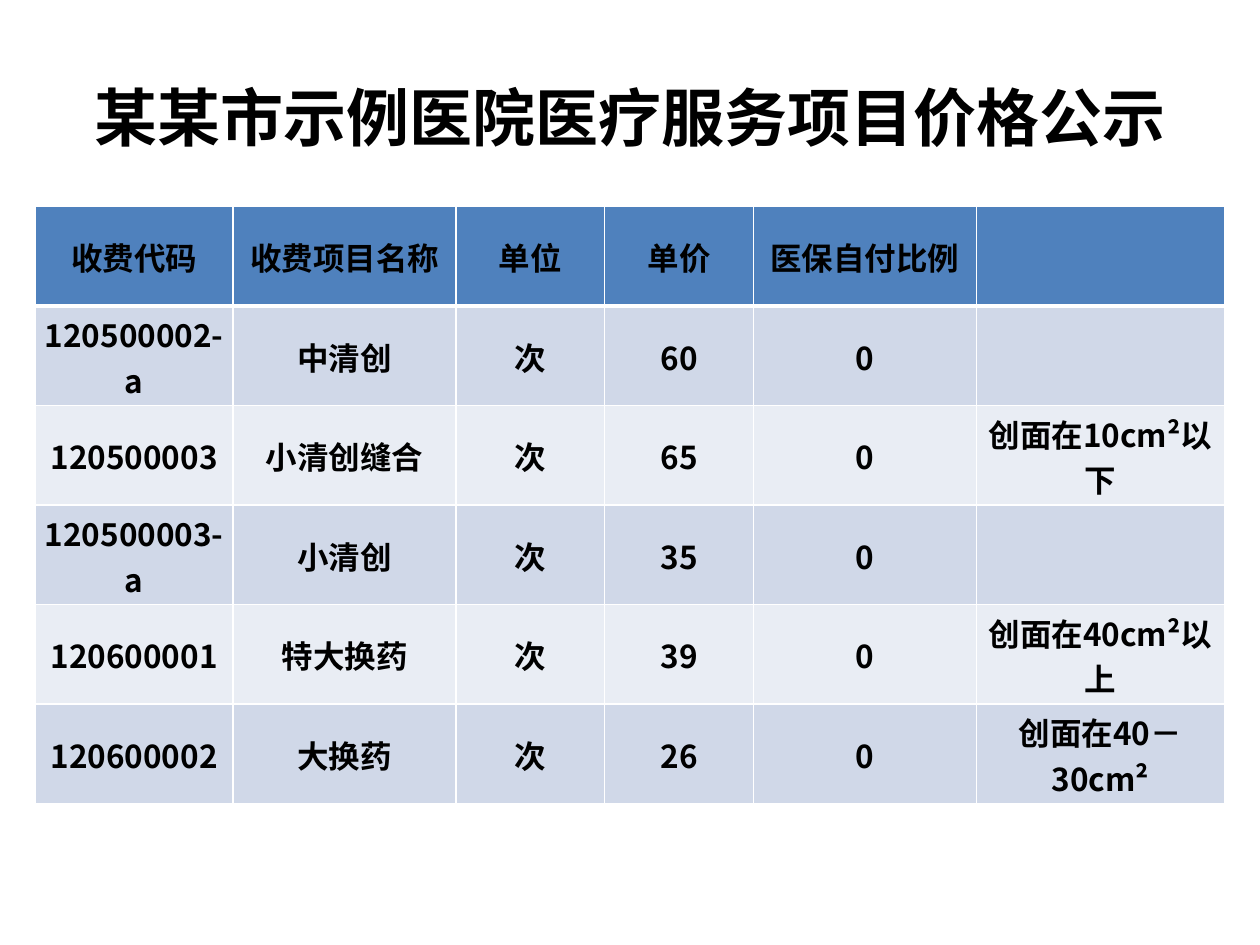
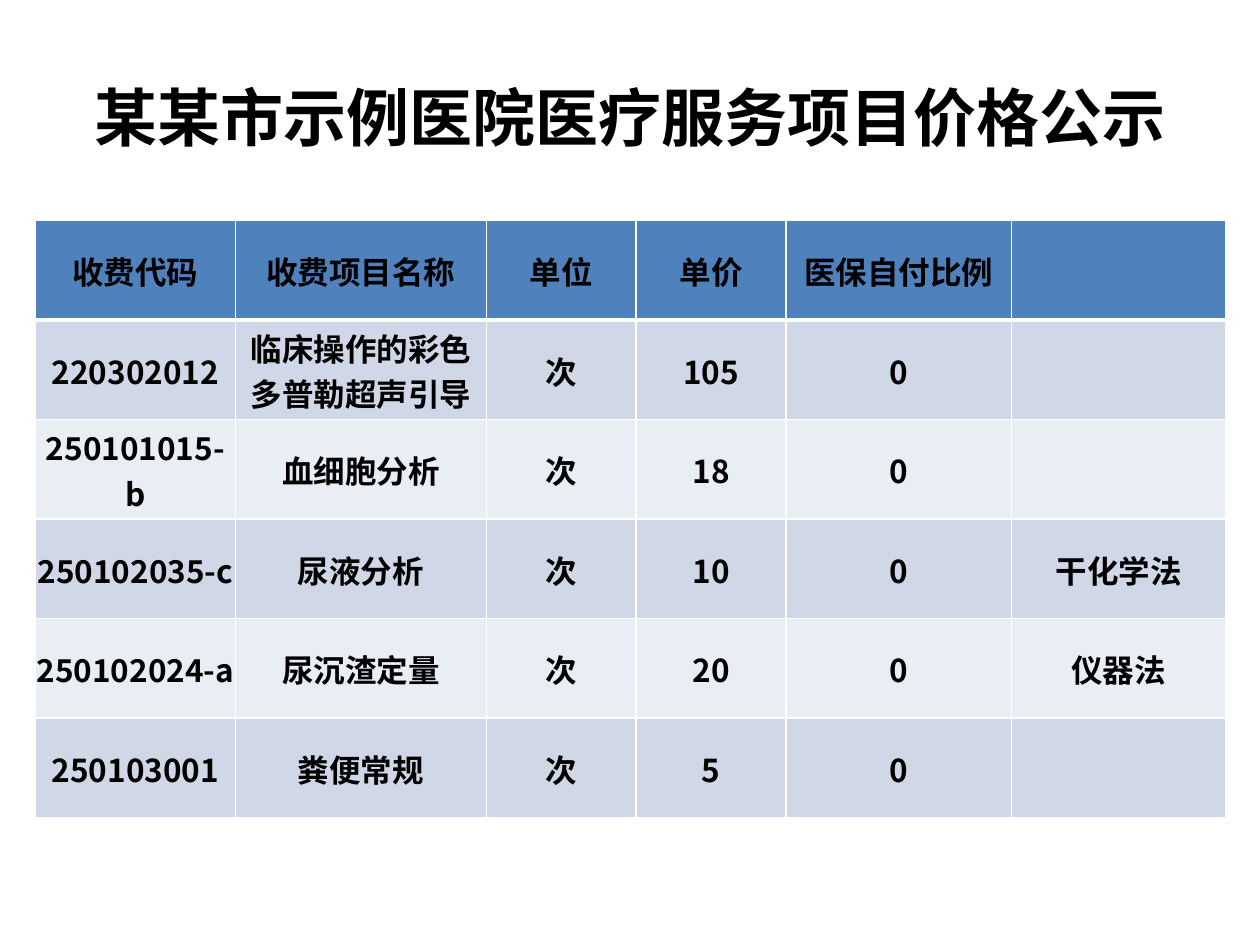
from lxml import etree
from pptx import Presentation
from pptx.dml.color import RGBColor
from pptx.enum.text import MSO_ANCHOR, PP_ALIGN
from pptx.oxml.ns import qn
from pptx.util import Inches, Pt

CENTER = PP_ALIGN.CENTER
MIDDLE = MSO_ANCHOR.MIDDLE

COLORS = {
    "text": "000000",
    "header": "4F81BD",
    "odd_row": "D0D8E8",
    "even_row": "E9EDF4",
    "border": "FFFFFF",
}
LATIN_TITLE_FONT = "Calibri"
CJK_FONT = "Noto Sans CJK SC"

BLANK_LAYOUT = 6
TITLE = "某某市示例医院医疗服务项目价格公示"
TITLE_BOX = (0.5, 0.3, 9, 1.25)
TABLE_LEFT = 0.28
ROW_HEIGHT = 0.79
THIN, THICK = 1, 3
HEADINGS = ("收费代码", "收费项目名称", "单位", "单价", "医保自付比例", "")
UNIT = "次"
SELF_PAY_RATIO = "0"

# Each item: code, name, price, remark
PRICE_LISTS = [
    {
        "top": 1.64,
        "widths": (1.57, 1.77, 1.18, 1.18, 1.77, 1.97),
        "items": [
            ("120500002-a", "中清创", "60", ""),
            ("120500003", "小清创缝合", "65", "创面在10cm²以下"),
            ("120500003-a", "小清创", "35", ""),
            ("120600001", "特大换药", "39", "创面在40cm²以上"),
            ("120600002", "大换药", "26", "创面在40－30cm²"),
        ],
    },
    {
        "top": 1.75,
        "widths": (1.59, 1.99, 1.19, 1.19, 1.79, 1.7),
        "items": [
            ("220302012", "临床操作的彩色多普勒超声引导", "105", ""),
            ("250101015-b", "血细胞分析", "18", ""),
            ("250102035-c", "尿液分析", "10", "干化学法"),
            ("250102024-a", "尿沉渣定量", "20", "仪器法"),
            ("250103001", "粪便常规", "5", ""),
        ],
    },
]


def write_centered(text_frame, text, size, latin_font):
    paragraph = text_frame.paragraphs[0]
    paragraph.text = text
    paragraph.alignment = CENTER
    for span in paragraph.runs:
        span.font.size = Pt(size)
        span.font.bold = True
        span.font.name = latin_font
        span.font.color.rgb = RGBColor.from_string(COLORS["text"])
        east_asian = etree.Element(qn("a:ea"), typeface=CJK_FONT)
        span.font._element.find(qn("a:latin")).addnext(east_asian)


def set_borders(cell, top, bottom):
    """Draw all four cell borders; top and bottom are widths in points."""
    properties = cell._tc.get_or_add_tcPr()
    sides = (("a:lnL", THIN), ("a:lnR", THIN), ("a:lnT", top), ("a:lnB", bottom))
    for position, (tag, width) in enumerate(sides):
        line = etree.Element(qn(tag), w=str(Pt(width)))
        fill = etree.SubElement(line, qn("a:solidFill"))
        etree.SubElement(fill, qn("a:srgbClr"), val=COLORS["border"])
        properties.insert(position, line)


def add_title(page, box):
    title = page.shapes.add_textbox(*map(Inches, box))
    title.text_frame.word_wrap = True
    title.text_frame.vertical_anchor = MIDDLE
    write_centered(title.text_frame, TITLE, 36, LATIN_TITLE_FONT)


def style_cell(cell, text, row_index):
    if row_index == 0:
        color = COLORS["header"]
    else:
        color = COLORS["odd_row" if row_index % 2 else "even_row"]
    cell.fill.solid()
    cell.fill.fore_color.rgb = RGBColor.from_string(color)
    cell.vertical_anchor = MIDDLE
    cell.margin_left = cell.margin_top = cell.margin_right = Inches(0.01)
    cell.margin_bottom = 0
    set_borders(cell,
                top=THICK if row_index == 1 else THIN,
                bottom=THICK if row_index == 0 else THIN)
    write_centered(cell.text_frame, text, 18, CJK_FONT)


def add_price_table(page, left, top, widths, items):
    rows = [HEADINGS] + [
        (code, name, UNIT, price, SELF_PAY_RATIO, remark)
        for code, name, price, remark in items
    ]
    table = page.shapes.add_table(
        len(rows), len(widths), Inches(left), Inches(top),
        Inches(sum(widths)), Inches(ROW_HEIGHT * len(rows))).table
    table.first_row = True
    table.horz_banding = False
    for column, width in zip(table.columns, widths):
        column.width = Inches(width)
    for row_index, texts in enumerate(rows):
        table.rows[row_index].height = Inches(ROW_HEIGHT)
        for column_index, text in enumerate(texts):
            style_cell(table.cell(row_index, column_index), text, row_index)


def main():
    deck = Presentation()
    deck.slide_width, deck.slide_height = Inches(10), Inches(7.5)
    for price_list in PRICE_LISTS:
        page = deck.slides.add_slide(deck.slide_layouts[BLANK_LAYOUT])
        add_title(page, TITLE_BOX)
        add_price_table(page, TABLE_LEFT, **price_list)
    deck.save("out.pptx")


if __name__ == "__main__":
    main()
